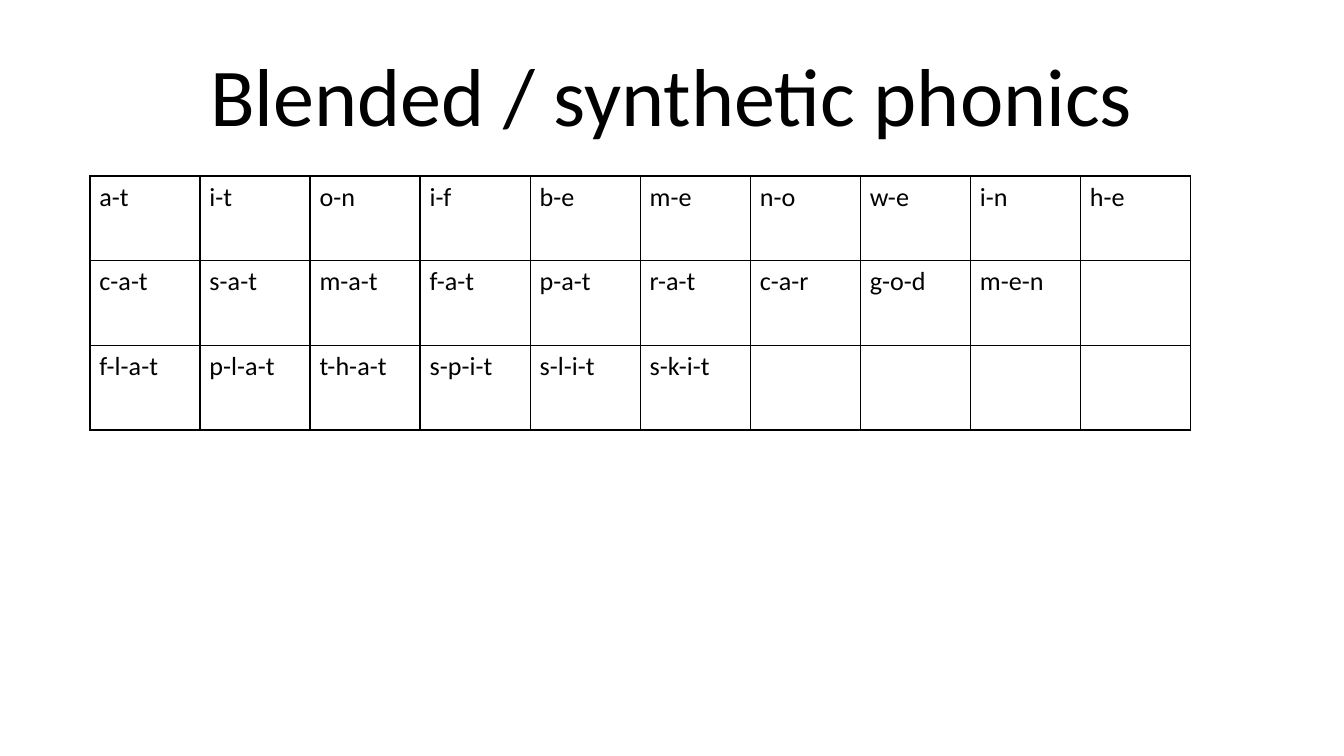
"""Build a slide with a table of words split into sounds for blending."""
import dataclasses

import pptx
import pptx.dml.color
import pptx.enum.text
import pptx.oxml
import pptx.oxml.ns
import pptx.util

Inches = pptx.util.Inches


@dataclasses.dataclass(frozen=True)
class Theme:
    font: str = "Calibri"
    ink: str = "000000"
    paper: str = "FFFFFF"
    title_size: int = 44
    word_size: int = 14
    border_width: int = 1


THEME = Theme()
COLUMN_COUNT = 10
WORD_ROWS = [
    ["a-t", "i-t", "o-n", "i-f", "b-e", "m-e", "n-o", "w-e", "i-n", "h-e"],
    ["c-a-t", "s-a-t", "m-a-t", "f-a-t", "p-a-t", "r-a-t", "c-a-r", "g-o-d", "m-e-n"],
    ["f-l-a-t", "p-l-a-t", "t-h-a-t", "s-p-i-t", "s-l-i-t", "s-k-i-t"],
]


def write_text(frame, text, *, size, align, anchor):
    frame.word_wrap = True
    frame.vertical_anchor = anchor
    paragraph = frame.paragraphs[0]
    paragraph.text = text
    paragraph.alignment = align
    paragraph.font.name = THEME.font
    paragraph.font.size = pptx.util.Pt(size)
    paragraph.font.bold = False
    paragraph.font.color.rgb = pptx.dml.color.RGBColor.from_string(THEME.ink)


def add_title(slide, text):
    title = slide.shapes.title
    title.left, title.top = Inches(0.5), Inches(0.23)
    title.width, title.height = Inches(9), Inches(0.94)
    write_text(
        title.text_frame, text, size=THEME.title_size,
        align=pptx.enum.text.PP_ALIGN.CENTER, anchor=pptx.enum.text.MSO_ANCHOR.MIDDLE,
    )


def draw_borders(cell):
    properties = cell._tc.get_or_add_tcPr()
    width = pptx.util.Pt(THEME.border_width)
    for side in ("lnL", "lnR", "lnT", "lnB"):
        properties.append(pptx.oxml.parse_xml(
            f'<a:{side} {pptx.oxml.ns.nsdecls("a")} w="{width}"><a:solidFill>'
            f'<a:srgbClr val="{THEME.ink}"/></a:solidFill></a:{side}>'
        ))


def format_cell(cell, word):
    cell.margin_left = cell.margin_right = Inches(0.07)
    cell.margin_top = cell.margin_bottom = Inches(0.04)
    draw_borders(cell)
    cell.fill.solid()
    cell.fill.fore_color.rgb = pptx.dml.color.RGBColor.from_string(THEME.paper)
    write_text(
        cell.text_frame, word, size=THEME.word_size,
        align=pptx.enum.text.PP_ALIGN.LEFT, anchor=pptx.enum.text.MSO_ANCHOR.TOP,
    )


def add_word_table(slide, word_rows):
    table = slide.shapes.add_table(
        len(word_rows), COLUMN_COUNT,
        Inches(0.67), Inches(1.31), Inches(8.19), Inches(1.89),
    ).table
    table.first_row = table.horz_banding = False
    for row, words in enumerate(word_rows):
        padded_words = words + [""] * (COLUMN_COUNT - len(words))
        for column, word in enumerate(padded_words):
            format_cell(table.cell(row, column), word)


def main():
    deck = pptx.Presentation()
    deck.slide_width = Inches(10)
    deck.slide_height = deck.slide_width * 9 // 16
    slide = deck.slides.add_slide(deck.slide_layouts.get_by_name("Title Only"))
    add_title(slide, "Blended / synthetic phonics")
    add_word_table(slide, WORD_ROWS)
    deck.save("out.pptx")


if __name__ == "__main__":
    main()
